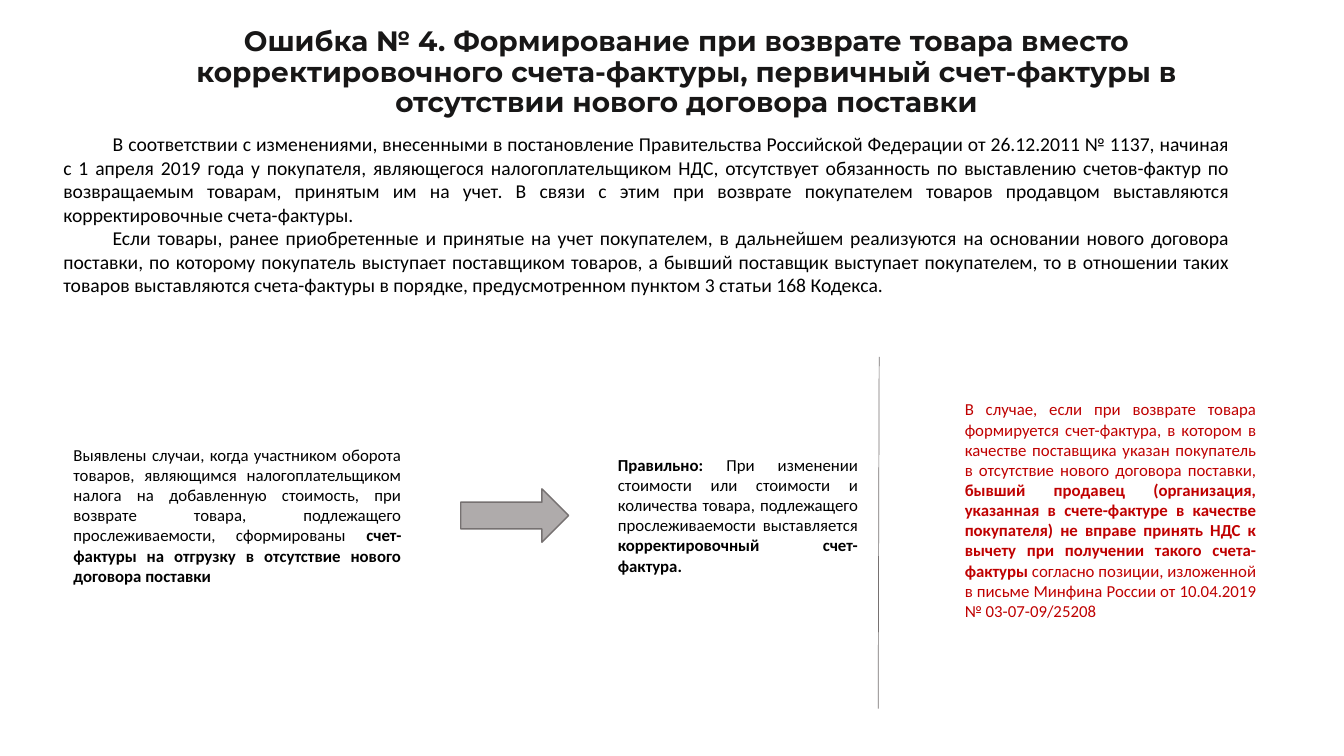
from lxml import etree
from pptx import Presentation
from pptx.dml.color import RGBColor
from pptx.enum.shapes import MSO_CONNECTOR, MSO_SHAPE
from pptx.enum.text import MSO_ANCHOR, MSO_AUTO_SIZE, PP_ALIGN
from pptx.oxml.ns import qn
from pptx.util import Inches, Pt

TITLE_COLOR = RGBColor(0x18, 0x17, 0x17)
BLACK = RGBColor(0x00, 0x00, 0x00)
RED = RGBColor(0xC0, 0x00, 0x00)
ARROW_FILL = RGBColor(0xAF, 0xAB, 0xAB)
LINE_GRAY = RGBColor(0x76, 0x71, 0x71)
RIGHT_ARROW = MSO_SHAPE.RIGHT_ARROW
STRAIGHT = MSO_CONNECTOR.STRAIGHT
MIDDLE = MSO_ANCHOR.MIDDLE
GROW = MSO_AUTO_SIZE.SHAPE_TO_FIT_TEXT
NO_AUTO_SIZE = MSO_AUTO_SIZE.NONE
CENTER = PP_ALIGN.CENTER
JUSTIFY = PP_ALIGN.JUSTIFY


def format_run(run, font_name, size, color, bold):
    run.font.name = font_name
    run.font.size = Pt(size)
    run.font.color.rgb = color
    run.font.bold = bold


def add_text(slide, box, paragraphs, size, color, first_indent=0):
    shape = slide.shapes.add_textbox(*[Inches(length) for length in box])
    frame = shape.text_frame
    frame.word_wrap = True
    frame.auto_size = GROW
    for index, parts in enumerate(paragraphs):
        paragraph = frame.add_paragraph() if index else frame.paragraphs[0]
        paragraph.alignment = JUSTIFY
        if first_indent:
            properties = paragraph._p.get_or_add_pPr()
            properties.set("marL", "0")
            properties.set("indent", str(Inches(first_indent)))
        for text, bold in parts:
            run = paragraph.add_run()
            run.text = text
            format_run(run, "Calibri", size, color, bold)


presentation = Presentation()
presentation.slide_width = Inches(13.33)
presentation.slide_height = Inches(7.5)
slide = presentation.slides.add_slide(presentation.slide_layouts[5])

title = slide.shapes.title
title.left, title.top = Inches(1.06), Inches(0)
title.width, title.height = Inches(11.5), Inches(1.45)
title_frame = title.text_frame
title_frame.text = (
    "Ошибка № 4. Формирование при возврате товара вместо корректировочного "
    "счета-фактуры, первичный счет-фактуры в отсутствии нового договора поставки"
)
title_frame.word_wrap = True
title_frame.auto_size = NO_AUTO_SIZE
title_frame.vertical_anchor = MIDDLE
title_paragraph = title_frame.paragraphs[0]
title_paragraph.alignment = CENTER
title_paragraph.line_spacing = 0.9
format_run(title_paragraph.runs[0], "Montserrat", 20, TITLE_COLOR, True)

introduction = [
    [(
        "В соответствии с изменениями, внесенными в постановление Правительства "
        "Российской Федерации от 26.12.2011 № 1137, начиная с 1 апреля 2019 года "
        "у покупателя, являющегося налогоплательщиком НДС, отсутствует обязанность "
        "по выставлению счетов-фактур по возвращаемым товарам, принятым им на учет. "
        "В связи с этим при возврате покупателем товаров продавцом выставляются "
        "корректировочные счета-фактуры.", False)],
    [(
        "Если товары, ранее приобретенные и принятые на учет покупателем, в дальнейшем "
        "реализуются на основании нового договора поставки, по которому покупатель "
        "выступает поставщиком товаров, а бывший поставщик выступает покупателем, "
        "то в отношении таких товаров выставляются счета-фактуры в порядке, "
        "предусмотренном пунктом 3 статьи 168 Кодекса.", False)],
]
add_text(slide, (0.53, 1.26, 11.77, 1.75), introduction, 14, BLACK, 0.49)

mistake = [
    ("Выявлены случаи, когда участником оборота товаров, являющимся "
     "налогоплательщиком налога на добавленную стоимость, при возврате товара, "
     "подлежащего прослеживаемости, сформированы ", False),
    ("счет-фактуры на отгрузку в отсутствие нового договора поставки", True),
]
correction = [
    ("Правильно: ", True),
    ("При изменении стоимости или стоимости и количества товара, подлежащего "
     "прослеживаемости выставляется ", False),
    ("корректировочный счет-фактура.", True),
]
consequence = [
    ("В случае, если при возврате товара формируется счет-фактура, в котором "
     "в качестве поставщика указан покупатель в отсутствие нового договора "
     "поставки, ", False),
    ("бывший продавец (организация, указанная в счете-фактуре в качестве "
     "покупателя) не вправе принять НДС к вычету при получении такого "
     "счета-фактуры", True),
    (" согласно позиции, изложенной в письме Минфина России от 10.04.2019 "
     "№ 03-07-09/25208", False),
]
for box, parts, color in [
    ((0.63, 4.36, 3.45, 1.51), mistake, BLACK),
    ((6.03, 4.46, 2.58, 1.31), correction, BLACK),
    ((9.47, 3.91, 3.09, 2.32), consequence, RED),
]:
    add_text(slide, box, [parts], 12, color)

arrow = slide.shapes.add_shape(
    RIGHT_ARROW, Inches(4.57), Inches(4.85), Inches(1.07), Inches(0.53))
arrow.shadow.inherit = False
arrow.fill.solid()
arrow.fill.fore_color.rgb = ARROW_FILL
arrow.line.color.rgb = LINE_GRAY
arrow.line.width = Pt(1)

divider = slide.shapes.add_connector(
    STRAIGHT, Inches(8.72), Inches(3.54), Inches(8.71), Inches(7.03))
divider.line.color.rgb = LINE_GRAY
divider.line.width = Pt(0.5)
etree.SubElement(divider._element.spPr, qn("a:effectLst"))

presentation.save("out.pptx")
